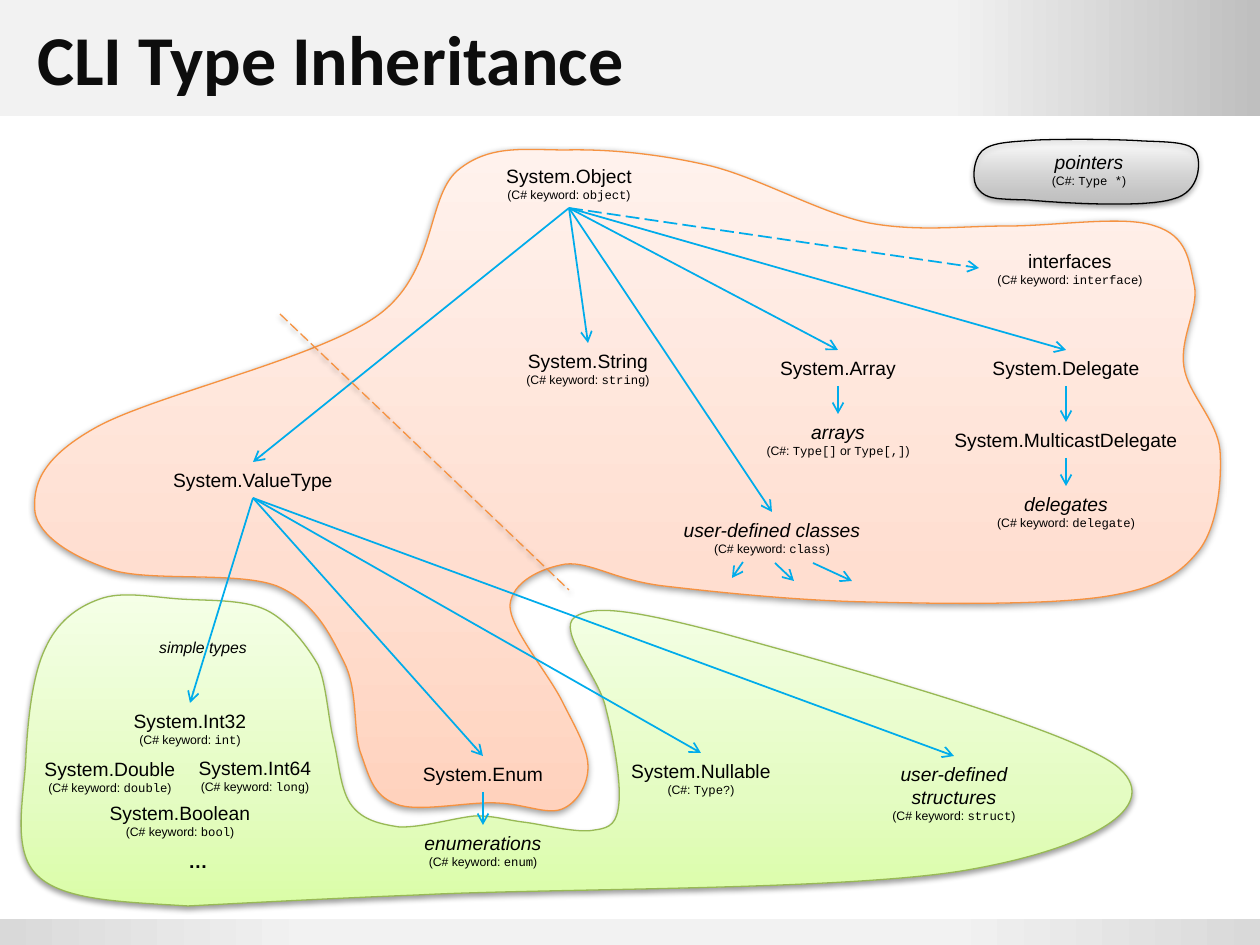
from lxml import etree
from pptx import Presentation
from pptx.dml.color import RGBColor
from pptx.enum.dml import MSO_LINE
from pptx.enum.shapes import MSO_CONNECTOR, MSO_SHAPE
from pptx.enum.text import MSO_ANCHOR, MSO_AUTO_SIZE, PP_ALIGN
from pptx.oxml import parse_xml
from pptx.oxml.ns import nsdecls, qn
from pptx.util import Pt

PX = 914400 / 126
BOTTOM, TOP, LEFT = 2, 0, 1
ORANGE, GREEN, BLUE = "F69240", "98B955", "00ACEB"
hex_colour = RGBColor.from_string
SHADOW = (f'<a:effectLst {nsdecls("a")}><a:outerShdw blurRad="40000" dist="20000" dir="5400000" '
          'rotWithShape="0"><a:srgbClr val="000000"><a:alpha val="38000"/></a:srgbClr>'
          '</a:outerShdw></a:effectLst>')
NO_EFFECT = f'<a:effectLst {nsdecls("a")}/>'


def write(para, text, size=11, font="Arial", colour="000000", bold=False, italic=False):
    span = para.add_run()
    span.text = text
    span.font.size = Pt(size)
    span.font.name = font
    span.font.bold = bold
    span.font.italic = italic
    span.font.color.rgb = hex_colour(colour)


def paint(shape, stops, angle, outline=None):
    """Gradient fill from (percent, colour, opacity) stops; outlined shapes cast a shadow."""
    marks = "".join(
        f'<a:gs pos="{pos * 1000}"><a:srgbClr val="{colour}"><a:alpha val="{alpha * 1000}"/>'
        '</a:srgbClr></a:gs>' for pos, colour, alpha in stops)
    properties = shape.element.spPr
    properties.append(parse_xml(
        f'<a:gradFill {nsdecls("a")} rotWithShape="1"><a:gsLst>{marks}</a:gsLst>'
        f'<a:lin ang="{angle * 60000}" scaled="0"/></a:gradFill>'))
    if outline:
        shape.line.color.rgb = hex_colour(outline)
        shape.line.width = Pt(0.75)
    else:
        shape.line.fill.background()
    properties.append(parse_xml(SHADOW if outline else NO_EFFECT))


deck = Presentation()
deck.slide_width, deck.slide_height = round(1260 * PX), round(945 * PX)
page = deck.slides.add_slide(deck.slide_layouts[6])
shapes = page.shapes

# Header and footer bands
bands = [
    (0, 116, [(75, "F2F2F2", 100), (100, "BFBFBF", 100)]),
    (919, 26, [(0, "D9D9D9", 100), (25, "F2F2F2", 100), (75, "F2F2F2", 100), (100, "D9D9D9", 100)]),
]
for top, height, stops in bands:
    band = shapes.add_shape(MSO_SHAPE.RECTANGLE, 0, round(top * PX), deck.slide_width, round(height * PX))
    paint(band, stops, 0)

# Curved regions: a start point, then two control points and an end point per curve
reference_types = [
    (566, 150), (524, 150), (489, 144), (457, 171), (426, 199), (437, 273), (377, 316),
    (316, 359), (151, 396), (95, 428), (38, 460), (33, 488), (35, 512),
    (39, 536), (72, 557), (112, 570), (152, 582), (238, 571), (277, 586),
    (315, 602), (330, 634), (344, 662), (358, 689), (353, 727), (360, 751),
    (369, 775), (372, 795), (396, 804), (418, 813), (470, 801), (498, 803),
    (525, 804), (547, 815), (562, 809), (577, 803), (588, 785), (588, 767),
    (588, 748), (575, 727), (562, 701), (548, 673), (509, 627), (510, 605),
    (512, 582), (541, 568), (566, 564), (592, 562), (614, 580), (664, 586),
    (716, 592), (799, 601), (873, 602), (946, 604), (1053, 605), (1108, 596),
    (1162, 587), (1181, 573), (1200, 549), (1218, 524), (1222, 480), (1220, 450),
    (1217, 420), (1188, 394), (1184, 367), (1179, 339), (1200, 306), (1194, 284),
    (1189, 260), (1187, 236), (1155, 226), (1125, 215), (1056, 226), (1008, 226),
    (960, 226), (919, 232), (869, 223), (820, 213), (762, 179), (711, 166),
    (660, 154), (609, 149), (566, 150),
]
value_types = [
    (179, 599), (151, 597), (122, 591), (100, 599), (77, 607), (57, 622), (45, 649),
    (33, 674), (28, 717), (26, 755), (25, 793), (10, 851), (38, 876),
    (64, 901), (125, 902), (188, 906), (265, 902), (341, 898), (418, 895),
    (549, 888), (856, 891), (973, 869), (1089, 848), (1162, 808), (1120, 769),
    (1079, 730), (811, 658), (721, 633), (629, 609), (593, 605), (575, 617),
    (556, 630), (600, 678), (606, 709), (614, 740), (621, 782), (619, 803),
    (617, 823), (611, 828), (595, 830), (578, 834), (541, 824), (522, 822),
    (501, 819), (495, 816), (475, 816), (454, 818), (421, 828), (399, 827),
    (379, 824), (363, 820), (352, 806), (340, 791), (339, 762), (333, 738),
    (328, 716), (326, 683), (318, 665), (309, 649), (289, 621), (266, 610),
    (243, 599), (207, 601), (179, 599),
]
pointer_types = [
    (1037, 140), (1063, 139), (1116, 139), (1143, 141), (1169, 142), (1191, 142), (1196, 152),
    (1201, 161), (1201, 192), (1173, 199), (1145, 208), (1061, 203), (1028, 200),
    (995, 199), (987, 199), (979, 190), (971, 183), (973, 160), (982, 151),
    (992, 142), (1011, 142), (1037, 140),
]
regions = [
    (reference_types, [(0, "FFD2BD", 100), (35, "FFDED0", 100), (100, "FFF2ED", 100)], ORANGE),
    (value_types, [(0, "DAFDA7", 100), (35, "E4FCC2", 100), (100, "F5FFE7", 100)], GREEN),
    (pointer_types, [(0, "BDBDBD", 100), (35, "D1D1D1", 60), (100, "EEEEEE", 0)], "000000"),
]
for points, stops, outline in regions:
    builder = shapes.build_freeform(*points[0], scale=PX)
    builder.add_line_segments(points[1:], close=True)
    region = builder.convert_to_shape()
    corners = list(region.element.iter(qn("a:lnTo")))
    for first in range(0, len(corners) - 2, 3):
        curve = etree.Element(qn("a:cubicBezTo"))
        corners[first].addprevious(curve)
        for corner in corners[first:first + 3]:
            curve.append(corner[0])
            corner.getparent().remove(corner)
    paint(region, stops, 270, outline)

# Title
title = shapes.add_textbox(round(25 * PX), 0, round(1211 * PX), round(116 * PX))
title.text_frame.word_wrap = True
title.text_frame.vertical_anchor = MSO_ANCHOR.MIDDLE
write(title.text_frame.paragraphs[0], "CLI Type Inheritance",
      size=40, font="Calibri", colour="0D0D0D", bold=True)

# Type labels: name, caption with code between bars, centre x, top, width, height, format
ITALIC = {"italic": True}
labels = [
    ("System.Object", "(C# keyword: |object|)", 569, 158, 218, 50, {}),
    ("user-defined classes", "(C# keyword: |class|)", 772, 512, 218, 50, ITALIC),
    ("delegates", "(C# keyword: |delegate|)", 1066, 486, 218, 50, ITALIC),
    ("pointers", "(C#: |Type *|)", 1089, 144, 218, 50, ITALIC),
    ("System.Delegate", "", 1066, 350, 218, 36, {}),
    ("System.MulticastDelegate", "", 1066, 422, 316, 36, {}),
    ("System.ValueType", "", 253, 462, 238, 36, {}),
    ("System.Enum", "", 483, 756, 196, 36, {}),
    ("System.Array", "", 838, 350, 238, 36, {}),
    ("arrays", "(C#: |Type[]| or |Type[,]|)", 838, 414, 218, 50, ITALIC),
    ("System.String", "(C# keyword: |string|)", 588, 343, 218, 50, {}),
    ("interfaces", "(C# keyword: |interface|)", 1070, 243, 182, 50, {}),
    ("user-defined structures", "(C# keyword: |struct|)", 954, 756, 218, 77, ITALIC),
    ("enumerations", "(C# keyword: |enum|)", 483, 825, 218, 50, ITALIC),
    ("System.Int32", "(C# keyword: |int|)", 190, 703, 218, 50, {}),
    ("System.Int64", "(C# keyword: |long|)", 255, 750, 218, 50, {}),
    ("System.Double", "(C# keyword: |double|)", 110, 751, 218, 50, {}),
    ("System.Boolean", "(C# keyword: |bool|)", 180, 795, 218, 50, {}),
    ("…", "", 198, 843, 64, 36, {"bold": True}),
    ("simple types", "", 203, 632, 198, 32, {"size": 9, "italic": True}),
    ("System.Nullable", "(C#: |Type?|)", 701, 753, 218, 50, {}),
]
boxes = {}
for name, caption, centre, top, width, height, style in labels:
    box = shapes.add_textbox(*(round(side * PX) for side in (centre - width // 2, top, width, height)))
    box.text_frame.word_wrap = True
    box.text_frame.auto_size = MSO_AUTO_SIZE.SHAPE_TO_FIT_TEXT
    para = box.text_frame.paragraphs[0]
    para.alignment = PP_ALIGN.CENTER
    write(para, name, **style)
    if caption:
        para.add_line_break()
        for index, piece in enumerate(caption.split("|")):
            write(para, piece, size=7, font="Courier New" if index % 2 else "Arial")
    boxes[name] = box

# Inheritance arrows, from the bottom of a parent to the top of its child
children = {
    "System.Object": ["System.Array", "System.Delegate", "user-defined classes",
                      "System.String", "System.ValueType", "interfaces"],
    "System.Array": ["arrays"],
    "System.Delegate": ["System.MulticastDelegate"],
    "System.MulticastDelegate": ["delegates"],
    "System.ValueType": ["System.Int32", "System.Enum", "System.Nullable", "user-defined structures"],
    "System.Enum": ["enumerations"],
}
lines = []
for parent, names in children.items():
    for name in names:
        arrow = shapes.add_connector(MSO_CONNECTOR.STRAIGHT, 0, 0, 0, 0)
        arrow.begin_connect(boxes[parent], BOTTOM)
        arrow.end_connect(boxes[name], LEFT if name == "interfaces" else TOP)
        lines.append((arrow, BLUE, name == "interfaces"))

# Loose arrows below the classes, and the dashed divider
loose = [
    (813, 563, 852, 581, BLUE), (775, 563, 794, 581, BLUE), (743, 562, 732, 578, BLUE),
    (280, 314, 569, 590, ORANGE),
]
for *ends, colour in loose:
    line = shapes.add_connector(MSO_CONNECTOR.STRAIGHT, *(round(end * PX) for end in ends))
    lines.append((line, colour, colour == ORANGE))

# Line formats
for line, colour, dashed in lines:
    line.line.color.rgb = hex_colour(colour)
    line.line.width = Pt(1 if colour == BLUE else 0.75)
    if dashed:
        line.line.dash_style = MSO_LINE.LONG_DASH
    properties = line.element.spPr
    if colour == BLUE:
        etree.SubElement(properties.find(qn("a:ln")), qn("a:tailEnd"), type="arrow")
    properties.append(parse_xml(NO_EFFECT if colour == BLUE else SHADOW))

deck.save("out.pptx")
